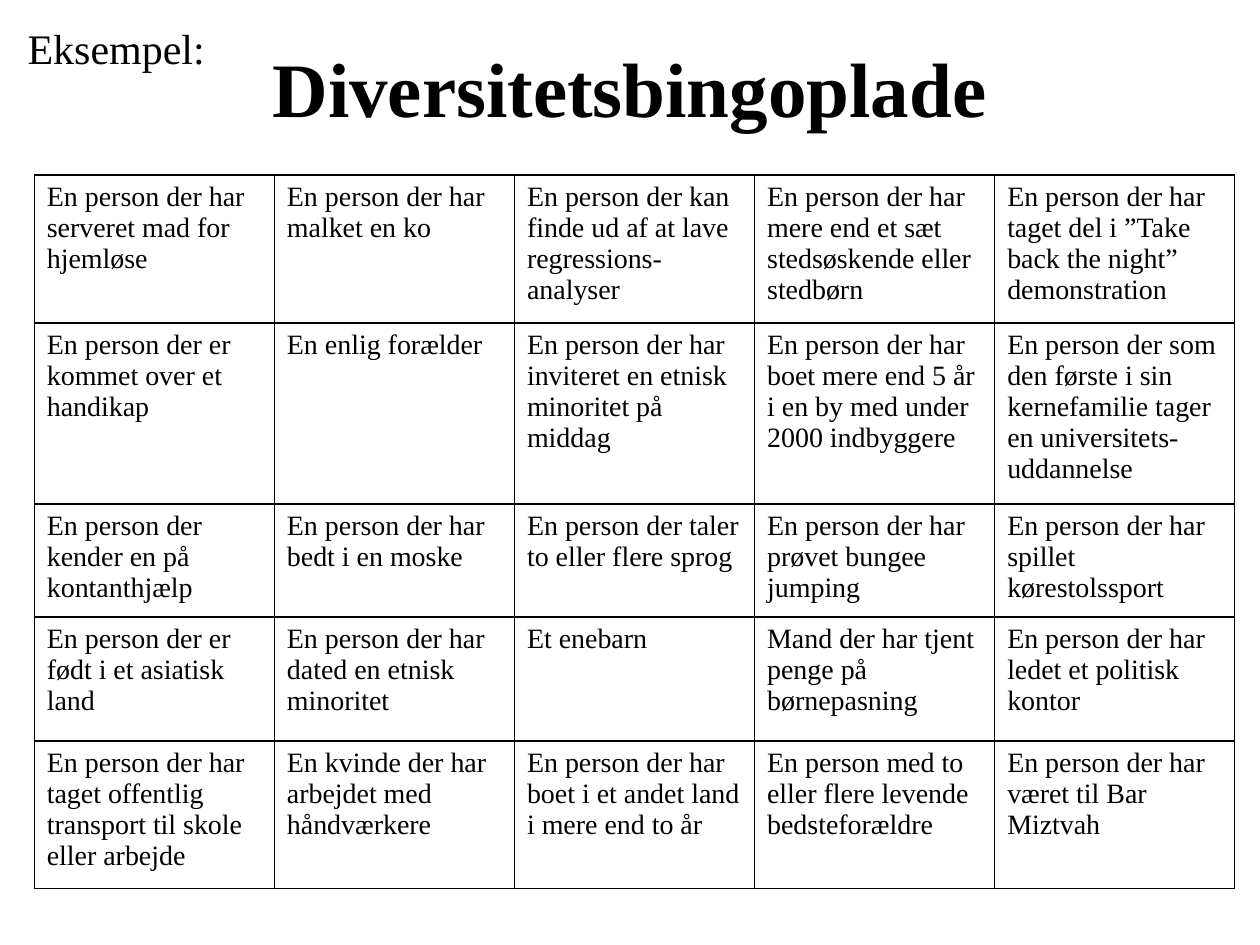
from dataclasses import dataclass

from lxml import etree
from pptx import Presentation
from pptx.dml.color import RGBColor
from pptx.enum import text
from pptx.oxml import ns
from pptx.util import Pt

BLACK = RGBColor(0x00, 0x00, 0x00)
FONT = "Times New Roman"
CELL_SIZE = 16
BORDER_WIDTH = 1

TABLE_LEFT, TABLE_TOP = 19.6, 100
COLUMN_WIDTH = 137.2
ROW_HEIGHTS = (84.7, 103.2, 64.7, 70.8, 84.2)

BINGO_ROWS = (
    (
        "En person der har serveret mad for hjemløse",
        "En person der har malket en ko",
        "En person der kan finde ud af at lave regressions-analyser",
        "En person der har mere end et sæt stedsøskende eller stedbørn",
        "En person der har taget del i ”Take back the night” demonstration",
    ),
    (
        "En person der er kommet over et handikap",
        "En enlig forælder",
        "En person der har inviteret en etnisk minoritet på middag",
        "En person der har boet mere end 5 år i en by med under 2000 indbyggere",
        "En person der som den første i sin kernefamilie tager en universitets-uddannelse",
    ),
    (
        "En person der kender en på kontanthjælp",
        "En person der har bedt i en moske",
        "En person der taler to eller flere sprog",
        "En person der har prøvet bungee jumping",
        "En person der har spillet kørestolssport",
    ),
    (
        "En person der er født i et asiatisk land",
        "En person der har dated en etnisk minoritet",
        "Et enebarn",
        "Mand der har tjent penge på børnepasning",
        "En person der har ledet et politisk kontor",
    ),
    (
        "En person der har taget offentlig transport til skole eller arbejde",
        "En kvinde der har arbejdet med håndværkere",
        "En person der har boet i et andet land i mere end to år",
        "En person med to eller flere levende bedsteforældre",
        "En person der har været til Bar Miztvah",
    ),
)


@dataclass(frozen=True)
class Label:
    wording: str
    left: float
    top: float
    width: float
    height: float
    size: float
    bold: bool = False
    wrap: bool = True
    align: text.PP_ALIGN = text.PP_ALIGN.LEFT
    anchor: text.MSO_ANCHOR = text.MSO_ANCHOR.TOP


LABELS = (
    Label("Diversitetsbingoplade", 36, 4.5, 648, 90, 44, bold=True,
          align=text.PP_ALIGN.CENTER, anchor=text.MSO_ANCHOR.MIDDLE),
    Label("Eksempel:", 8.64, 9.36, 116.64, 36, 24, wrap=False),
)


def format_text(frame, size: float, bold: bool = False) -> None:
    for para in frame.paragraphs:
        for span in para.runs:
            span.font.name = FONT
            span.font.size = Pt(size)
            span.font.bold = bold
            span.font.color.rgb = BLACK


def draw_label(page, label: Label) -> None:
    box = page.shapes.add_textbox(
        Pt(label.left), Pt(label.top), Pt(label.width), Pt(label.height))
    frame = box.text_frame
    frame.text = label.wording
    frame.word_wrap = label.wrap
    frame.vertical_anchor = label.anchor
    frame.paragraphs[0].alignment = label.align
    format_text(frame, label.size, label.bold)


def draw_borders(cell) -> None:
    properties = cell._tc.get_or_add_tcPr()
    for position, side in enumerate(("a:lnL", "a:lnR", "a:lnT", "a:lnB")):
        line = etree.Element(ns.qn(side), w=str(Pt(BORDER_WIDTH)))
        fill = etree.SubElement(line, ns.qn("a:solidFill"))
        etree.SubElement(fill, ns.qn("a:srgbClr"), val=str(BLACK))
        properties.insert(position, line)


def draw_bingo_card(page) -> None:
    column_count = len(BINGO_ROWS[0])
    table = page.shapes.add_table(
        len(BINGO_ROWS), column_count, Pt(TABLE_LEFT), Pt(TABLE_TOP),
        Pt(COLUMN_WIDTH * column_count), Pt(sum(ROW_HEIGHTS))).table
    table.first_row = False
    table.horz_banding = False
    for column in table.columns:
        column.width = Pt(COLUMN_WIDTH)
    for row, height, wordings in zip(table.rows, ROW_HEIGHTS, BINGO_ROWS):
        row.height = Pt(height)
        for cell, wording in zip(row.cells, wordings):
            cell.text_frame.text = wording
            format_text(cell.text_frame, CELL_SIZE)
            cell.fill.background()
            draw_borders(cell)


def main() -> None:
    deck = Presentation()
    deck.slide_width, deck.slide_height = Pt(720), Pt(540)
    page = deck.slides.add_slide(deck.slide_layouts[6])

    # Title and corner label
    for label in LABELS:
        draw_label(page, label)

    # Bingo card
    draw_bingo_card(page)

    deck.save("out.pptx")


if __name__ == "__main__":
    main()
